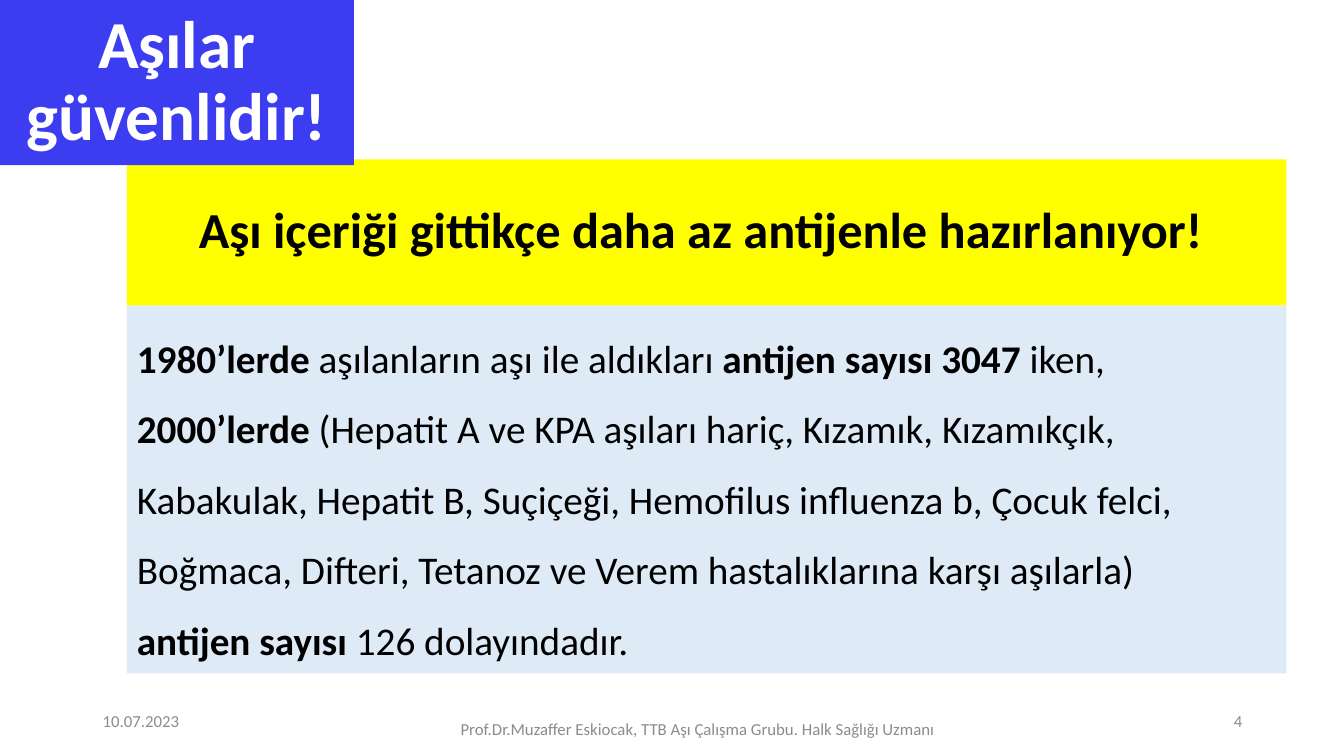
from pptx import Presentation
from pptx.dml.color import RGBColor
from pptx.enum.shapes import MSO_SHAPE
from pptx.enum.text import MSO_ANCHOR, PP_ALIGN
from pptx.util import Pt

PX = 9144  # EMU per px, 100 px to the inch

THEME = {
    "font": "Calibri",
    "colors": {
        "ink": RGBColor(0x00, 0x00, 0x00),
        "white": RGBColor(0xFF, 0xFF, 0xFF),
        "footer": RGBColor(0x8C, 0x8C, 0x8C),
        "badge": RGBColor(0x3C, 0x3C, 0xF0),
        "heading": RGBColor(0xFF, 0xFF, 0x00),
        "body": RGBColor(0xDE, 0xEB, 0xF7),
    },
    "sizes": {"badge": Pt(48), "heading": Pt(36), "body": Pt(28), "footer": Pt(12)},
}

FOOTER_TOP = 695

# Each run is (text, bold); a newline is a line break
ANTIGEN_RUNS = [
    ("1980’lerde", True),
    (" aşılanların aşı ile aldıkları ", False),
    ("antijen sayısı 3047 ", True),
    ("iken, ", False),
    ("2000’lerde", True),
    (" (Hepatit A ve KPA aşıları hariç, Kızamık, Kızamıkçık, Kabakulak, "
     "Hepatit B, Suçiçeği, Hemofilus influenza b, Çocuk felci, Boğmaca, "
     "Difteri, Tetanoz ve Verem hastalıklarına karşı aşılarla) ", False),
    ("\n", False),
    ("antijen sayısı ", True),
    ("126 dolayındadır.", False),
]


def apply_format(target, values):
    for name, value in values.items():
        setattr(target, name, value)


def emu(box):
    return [length * PX for length in box]


def write_runs(frame, runs, size, color, align, spacing=1.0, anchor=MSO_ANCHOR.MIDDLE):
    apply_format(frame, {"word_wrap": True, "vertical_anchor": anchor})
    paragraph = frame.paragraphs[0]
    apply_format(paragraph, {"alignment": align, "line_spacing": spacing})
    for text, bold in runs:
        if text == "\n":
            paragraph.add_line_break()
            continue
        run = paragraph.add_run()
        run.text = text
        apply_format(run.font, {"name": THEME["font"], "bold": bold,
                                "size": THEME["sizes"][size]})
        run.font.color.rgb = THEME["colors"][color]


def add_panel(slide, part, box, runs, color="ink", align=PP_ALIGN.CENTER, **layout):
    panel = slide.shapes.add_shape(MSO_SHAPE.RECTANGLE, *emu(box))
    panel.shadow.inherit = False
    panel.fill.solid()
    panel.fill.fore_color.rgb = THEME["colors"][part]
    panel.line.fill.background()
    write_runs(panel.text_frame, runs, part, color, align, **layout)


def add_footer(slide, box, text, align):
    footer = slide.shapes.add_textbox(*emu(box))
    write_runs(footer.text_frame, [(text, False)], "footer", "footer", align)


def main():
    deck = Presentation()
    apply_format(deck, {"slide_width": 1333 * PX, "slide_height": 750 * PX})
    slide = deck.slides.add_slide(deck.slide_layouts[6])

    # Antigen counts and their heading
    add_panel(slide, "body", (126, 303, 1150, 365), ANTIGEN_RUNS,
              align=PP_ALIGN.LEFT, spacing=1.5, anchor=MSO_ANCHOR.TOP)
    add_panel(slide, "heading", (126, 158, 1150, 145),
              [("Aşı içeriği gittikçe daha az antijenle hazırlanıyor! ", True)], spacing=0.9)

    # Corner badge
    add_panel(slide, "badge", (0, 0, 351, 164), [("Aşılar güvenlidir!", True)],
              color="white", spacing=0.9)

    # Footer: author, date and slide number
    add_footer(slide, (442, FOOTER_TOP, 500, 55),
               "Prof.Dr.Muzaffer Eskiocak, TTB Aşı Çalışma Grubu. Halk Sağlığı Uzmanı",
               PP_ALIGN.CENTER)
    add_footer(slide, (92, FOOTER_TOP, 300, 40), "10.07.2023", PP_ALIGN.LEFT)
    add_footer(slide, (942, FOOTER_TOP, 300, 40), "4", PP_ALIGN.RIGHT)

    deck.save("out.pptx")


if __name__ == "__main__":
    main()
